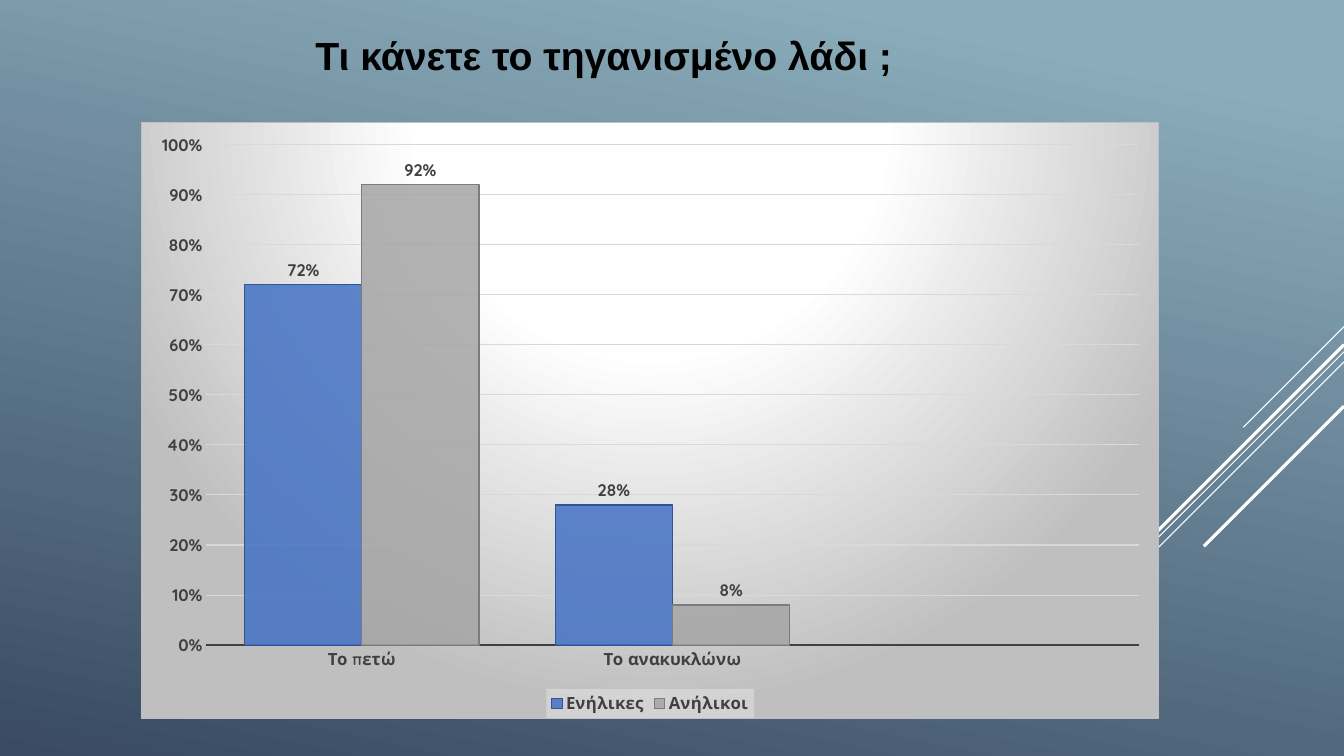
from dataclasses import dataclass

from lxml import etree
from pptx import Presentation
from pptx.chart.data import CategoryChartData
from pptx.dml.color import RGBColor
from pptx.enum.chart import XL_CHART_TYPE, XL_LABEL_POSITION, XL_LEGEND_POSITION, XL_TICK_MARK
from pptx.enum.shapes import MSO_CONNECTOR
from pptx.enum.text import MSO_AUTO_SIZE
from pptx.oxml import parse_xml
from pptx.oxml.ns import nsdecls, qn
from pptx.util import Inches, Pt

COLUMNS = XL_CHART_TYPE.COLUMN_CLUSTERED
OUTSIDE_END = XL_LABEL_POSITION.OUTSIDE_END
LEGEND_BOTTOM = XL_LEGEND_POSITION.BOTTOM
NO_TICK = XL_TICK_MARK.NONE
STRAIGHT = MSO_CONNECTOR.STRAIGHT
FIT_SHAPE = MSO_AUTO_SIZE.SHAPE_TO_FIT_TEXT


@dataclass(frozen=True)
class Theme:
    background: tuple = ("8AACBB", "394A61")
    white: str = "FFFFFF"
    black: str = "000000"
    text: str = "404040"
    grid: str = "D9D9D9"
    panel: str = "BFBFBF"
    legend: str = "F2F2F2"
    adults: tuple = ("4472C4", "2F5597")
    minors: tuple = ("A5A5A5", "7C7C7C")
    title_font: str = "Arial"
    chart_font: str = "Quicksand"
    title_size: float = 28
    chart_size: float = 12
    thin: float = 0.75
    axis: float = 1.5
    thick: float = 2.25


THEME = Theme()
SLIDE_WIDTH, SLIDE_HEIGHT = 13.33, 7.5

# Diagonals run down and left from the right edge: start y, length, weight
DIAGONALS = [
    (3.24, 1.00, THEME.thin),
    (3.49, 3.26, THEME.thin),
    (3.59, 2.07, THEME.thin),
    (3.42, 1.91, THEME.thick),
    (4.03, 1.39, THEME.thick),
]
CATEGORIES = ["Το πετώ", "Το ανακυκλώνω", ""]
SERIES = [
    ("Ενήλικες", (0.72, 0.28, None), THEME.adults),
    ("Ανήλικοι", (0.92, 0.08, None), THEME.minors),
]


def rgb(value):
    return RGBColor.from_string(value)


def style_font(font, name, size, color):
    font.name, font.size, font.bold = name, Pt(size), True
    font.color.rgb = rgb(color)


def style_chart_font(font):
    style_font(font, THEME.chart_font, THEME.chart_size, THEME.text)


def style_line(line, color, weight):
    line.color.rgb = rgb(color)
    line.width = Pt(weight)


def paint_background(slide):
    fill = slide.background.fill
    fill.gradient()
    fill.gradient_angle = 258
    for stop, position, color in zip(fill.gradient_stops, (0.1, 1), THEME.background):
        stop.position = position
        stop.color.rgb = rgb(color)


def add_diagonals(slide, right):
    for top, length, weight in DIAGONALS:
        connector = slide.shapes.add_connector(
            STRAIGHT, Inches(right), Inches(top), Inches(right - length), Inches(top + length))
        style_line(connector.line, THEME.white, weight)
        etree.SubElement(connector._element.spPr, qn("a:effectLst"))


def style_panel(chart):
    """Radial gradient and border of the whole chart area."""
    stops = "".join(
        f'<a:gs pos="{position * 1000}"><a:srgbClr val="{color}"/></a:gs>'
        for position, color in ((0, THEME.white), (39, THEME.white), (100, THEME.panel)))
    chart._chartSpace.find(qn("c:chart")).addnext(parse_xml(
        f'<c:spPr {nsdecls("c", "a")}><a:gradFill><a:gsLst>{stops}</a:gsLst>'
        '<a:path path="circle"><a:fillToRect l="50000" t="-80000" r="50000" b="180000"/></a:path>'
        f'</a:gradFill><a:ln w="{Pt(THEME.thin)}"><a:solidFill>'
        f'<a:srgbClr val="{THEME.panel}"/></a:solidFill></a:ln></c:spPr>'))


def style_axes(chart):
    for axis in (chart.category_axis, chart.value_axis):
        axis.major_tick_mark = axis.minor_tick_mark = NO_TICK
        style_chart_font(axis.tick_labels.font)
    style_line(chart.category_axis.format.line, THEME.text, THEME.axis)
    values = chart.value_axis
    values.minimum_scale, values.maximum_scale, values.major_unit = 0, 1, 0.1
    values.format.line.fill.background()
    style_line(values.major_gridlines.format.line, THEME.grid, THEME.thin)
    values.tick_labels.number_format = "0%"
    values.tick_labels.number_format_is_linked = False


def style_legend(chart):
    chart.has_legend = True
    legend = chart.legend
    legend.position = LEGEND_BOTTOM
    legend.include_in_layout = False
    style_chart_font(legend.font)
    legend._element.find(qn("c:overlay")).addnext(parse_xml(
        f'<c:spPr {nsdecls("c", "a")}><a:solidFill><a:srgbClr val="{THEME.legend}">'
        '<a:alpha val="39000"/></a:srgbClr></a:solidFill></c:spPr>'))


def style_series(series, fill_color, line_color):
    series.format.fill.solid()
    series.format.fill.fore_color.rgb = rgb(fill_color)
    color = series._element.find(qn("c:spPr")).find(f'{qn("a:solidFill")}/{qn("a:srgbClr")}')
    etree.SubElement(color, qn("a:alpha"), val="85000")
    style_line(series.format.line, line_color, THEME.thin)
    labels = series.data_labels
    labels.show_value = True
    labels.position = OUTSIDE_END
    labels.number_format = "0%"
    labels.number_format_is_linked = False
    style_chart_font(labels.font)


def add_answers_chart(slide, left, top, width, height):
    data = CategoryChartData(number_format="0%")
    data.categories = CATEGORIES
    for name, values, _ in SERIES:
        data.add_series(name, values)
    chart = slide.shapes.add_chart(
        COLUMNS, Inches(left), Inches(top), Inches(width), Inches(height), data).chart
    chart.has_title = False
    style_chart_font(chart.font)
    plot = chart.plots[0]
    plot.gap_width, plot.overlap, plot.vary_by_categories = 65, 0, False
    for series, (_, _, colors) in zip(plot.series, SERIES):
        style_series(series, *colors)
    style_axes(chart)
    style_legend(chart)
    style_panel(chart)


def add_title(slide, left, top, width, height):
    box = slide.shapes.add_textbox(Inches(left), Inches(top), Inches(width), Inches(height))
    frame = box.text_frame
    frame.word_wrap = False
    frame.auto_size = FIT_SHAPE
    run = frame.paragraphs[0].add_run()
    run.text = "Τι κάνετε το τηγανισμένο λάδι ;"
    style_font(run.font, THEME.title_font, THEME.title_size, THEME.black)


def main():
    presentation = Presentation()
    presentation.slide_width = Inches(SLIDE_WIDTH)
    presentation.slide_height = Inches(SLIDE_HEIGHT)
    slide = presentation.slides.add_slide(presentation.slide_layouts[6])
    paint_background(slide)
    add_diagonals(slide, SLIDE_WIDTH)
    add_answers_chart(slide, 1.4, 1.21, 10.1, 5.92)
    add_title(slide, 3.03, 0.26, 5.99, 0.57)
    presentation.save("out.pptx")


if __name__ == "__main__":
    main()
